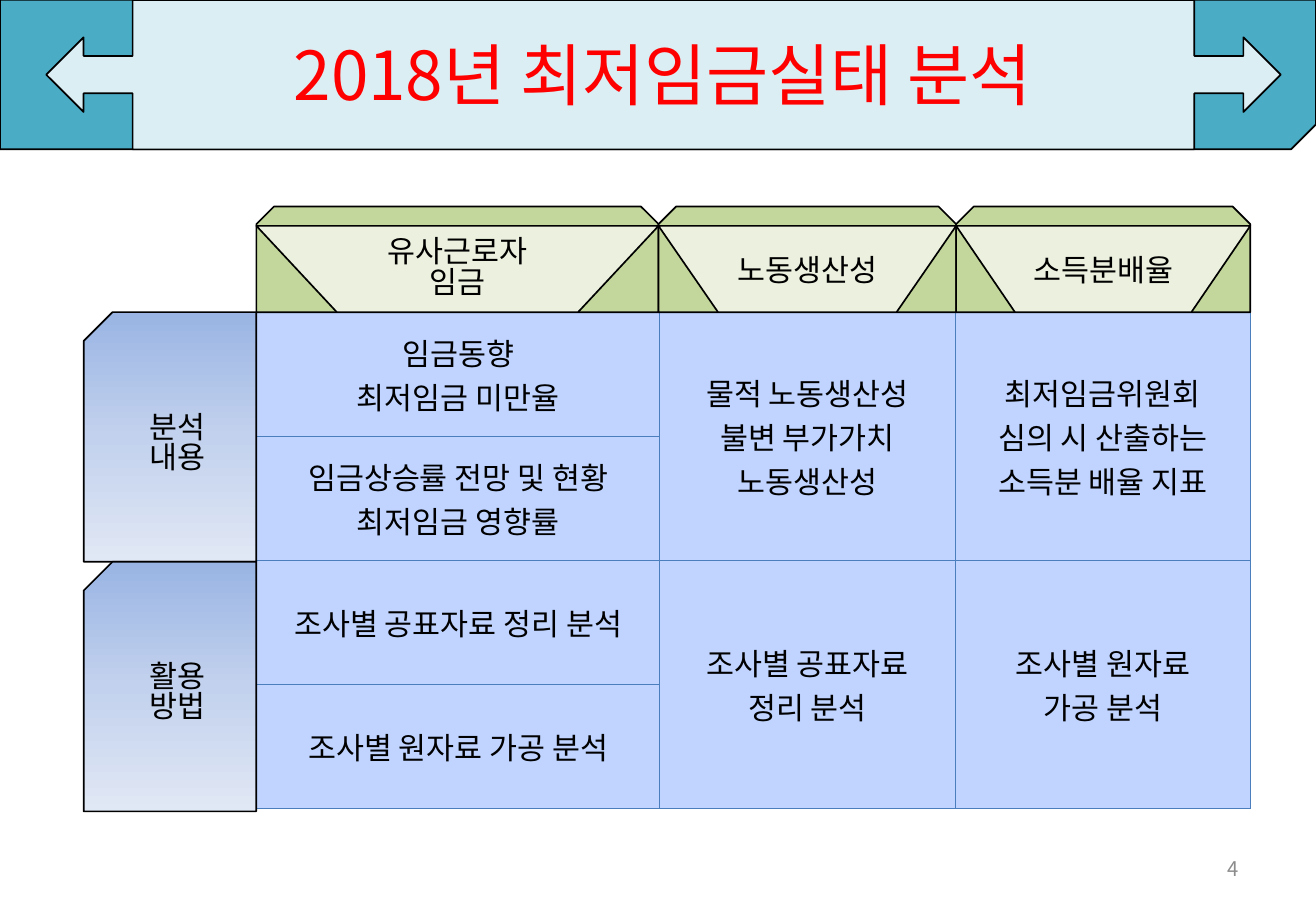
from copy import deepcopy
from itertools import product

from lxml.etree import SubElement as Sub
from pptx import Presentation
from pptx.dml.color import RGBColor
from pptx.enum.shapes import MSO_SHAPE as Shape
from pptx.enum.text import MSO_ANCHOR as Anchor, PP_ALIGN as Align
from pptx.oxml.ns import qn
from pptx.util import Inches, Pt

BLACK = RGBColor(0x00, 0x00, 0x00)
RED = RGBColor(0xFF, 0x00, 0x00)
GRAY = RGBColor(0x8C, 0x8C, 0x8C)
TEAL = RGBColor(0x4B, 0xAC, 0xC6)
PALE = RGBColor(0xDB, 0xEE, 0xF4)
GREEN = RGBColor(0xC3, 0xD6, 0x9B)
CREAM = RGBColor(0xEB, 0xF1, 0xDE)
CELL = RGBColor(0xC0, 0xD4, 0xFF)
EDGE = RGBColor(0x4B, 0x7E, 0xBC)
FADE = (RGBColor(0x9A, 0xB5, 0xE4), RGBColor(0xC2, 0xD1, 0xED),
        RGBColor(0xE1, 0xE8, 0xF5))
FONT = "Noto Sans CJK KR"

LEFT, TOP = 19.48, 34.27
WIDTHS = (30.66, 22.44, 22.44)
ROW = 13.63
HEADS = ((30.56, ("유사근로자", "임금")), (22.62, ("노동생산성",)),
         (22.35, ("소득분배율",)))
SIDES = (("분석", "내용"), ("활용", "방법"))
# (row, column, rows spanned, lines)
CELLS = (
    (0, 0, 1, ("임금동향", "최저임금 미만율")),
    (1, 0, 1, ("임금상승률 전망 및 현황", "최저임금 영향률")),
    (2, 0, 1, ("조사별 공표자료 정리 분석",)),
    (3, 0, 1, ("조사별 원자료 가공 분석",)),
    (0, 1, 2, ("물적 노동생산성", "불변 부가가치", "노동생산성")),
    (0, 2, 2, ("최저임금위원회", "심의 시 산출하는", "소득분 배율 지표")),
    (2, 1, 2, ("조사별 공표자료", "정리 분석")),
    (2, 2, 2, ("조사별 원자료", "가공 분석")),
)


class Page:
    """One slide on a grid of 100 columns by 100 rows."""

    def __init__(self, deck):
        self.slide = deck.slides.add_slide(deck.slide_layouts[6])
        self.shapes = self.slide.shapes
        self.col = deck.slide_width / 100
        self.row = deck.slide_height / 100

    def place(self, x, y, w, h):
        return (round(x * self.col), round(y * self.row),
                round(w * self.col), round(h * self.row))

    def fill_in(self, frame, lines, size=18, color=BLACK, align=Align.CENTER, pitch=None):
        """Put each line in a paragraph of its own."""
        frame.word_wrap = True
        for i, line in enumerate(lines):
            para = frame.add_paragraph() if i else frame.paragraphs[0]
            para.alignment = align
            if pitch:
                para.line_spacing = pitch
            run = para.add_run()
            run.text = line
            run.font.size = Pt(size)
            run.font.name = FONT
            run.font.color.rgb = color
            Sub(run.font._element, qn("a:ea"), typeface=FONT)

    def text(self, box, line, size, color, align=Align.CENTER):
        frame = self.shapes.add_textbox(*self.place(*box)).text_frame
        frame.vertical_anchor = Anchor.MIDDLE
        self.fill_in(frame, [line], size, color, align)

    def block(self, kind, box, fill, lines=(), flip=None):
        shape = self.shapes.add_shape(kind, *self.place(*box))
        shape.shadow.inherit = False
        shape.line.color.rgb = BLACK
        shape.line.width = Pt(1)
        if isinstance(fill, RGBColor):
            shape.fill.solid()
            shape.fill.fore_color.rgb = fill
        else:
            self.fade(shape, fill)
        if flip:
            shape._element.spPr.xfrm.set(flip, "1")
        if lines:
            shape.text_frame.vertical_anchor = Anchor.MIDDLE
            self.fill_in(shape.text_frame, lines, pitch=0.83 if len(lines) > 1 else None)
        return shape

    def fade(self, shape, colors):
        """Fill from top to bottom with evenly spaced colours."""
        shape.fill.gradient()
        shape.fill.gradient_angle = 270
        stops = shape._element.spPr.find(qn("a:gradFill")).find(qn("a:gsLst"))
        while len(stops) < len(colors):
            stops.append(deepcopy(stops[-1]))
        for i, (stop, color) in enumerate(zip(shape.fill.gradient_stops, colors)):
            stop.position = i / (len(colors) - 1)
            stop.color.rgb = color

    def frame(self, cell):
        """Draw the cell's four borders and its fill."""
        props = cell._tc.get_or_add_tcPr()
        for side in ("a:lnL", "a:lnR", "a:lnT", "a:lnB"):
            line = Sub(props, qn(side), w=str(Pt(0.75)))
            Sub(Sub(line, qn("a:solidFill")), qn("a:srgbClr"), val=str(EDGE))
        cell.fill.solid()
        cell.fill.fore_color.rgb = CELL

    def table(self, x, y, widths, row, count, cells):
        box = self.place(x, y, sum(widths), row * count)
        table = self.shapes.add_table(count, len(widths), *box).table
        table.first_row = table.horz_banding = False
        for col, width in zip(table.columns, widths):
            col.width = round(width * self.col)
        for r, c in product(range(count), range(len(widths))):
            self.frame(table.cell(r, c))
        for r, c, span, lines in cells:
            cell = table.cell(r, c)
            if span > 1:
                cell.merge(table.cell(r + span - 1, c))
            cell.vertical_anchor = Anchor.MIDDLE
            self.fill_in(cell.text_frame, lines)


def main():
    deck = Presentation()
    deck.slide_width, deck.slide_height = Inches(10.83), Inches(7.5)
    page = Page(deck)

    page.block(Shape.SNIP_1_RECTANGLE, (0, 0, 100, 16.4), TEAL, flip="flipV")
    banner = page.block(Shape.LEFT_RIGHT_ARROW_CALLOUT, (3.51, 0, 93.81, 16.4), PALE)
    for i, share in enumerate((0.25, 0.25, 0.25, 0.86)):
        banner.adjustments[i] = share
    page.text((5.36, -0.27, 90.03, 16.67), "2018년 최저임금실태 분석", 40, RED)
    page.text((71.65, 92.67, 23.36, 5.33), "4", 12, GRAY, Align.RIGHT)

    page.table(LEFT, TOP, WIDTHS, ROW, 4, CELLS)

    x = LEFT
    for width, lines in HEADS:
        page.block(Shape.SNIP_2_SAME_RECTANGLE, (x, 22.67, width, 11.6), GREEN)
        page.block(Shape.FLOWCHART_MANUAL_OPERATION, (x, 24.8, width, 9.47), CREAM, lines)
        x += width

    tall = 27.4
    for i, lines in enumerate(SIDES):
        page.block(Shape.SNIP_1_RECTANGLE, (6.37, TOP + i * tall, 13.11, tall),
                   FADE, lines, "flipH")

    deck.save("out.pptx")


if __name__ == "__main__":
    main()
